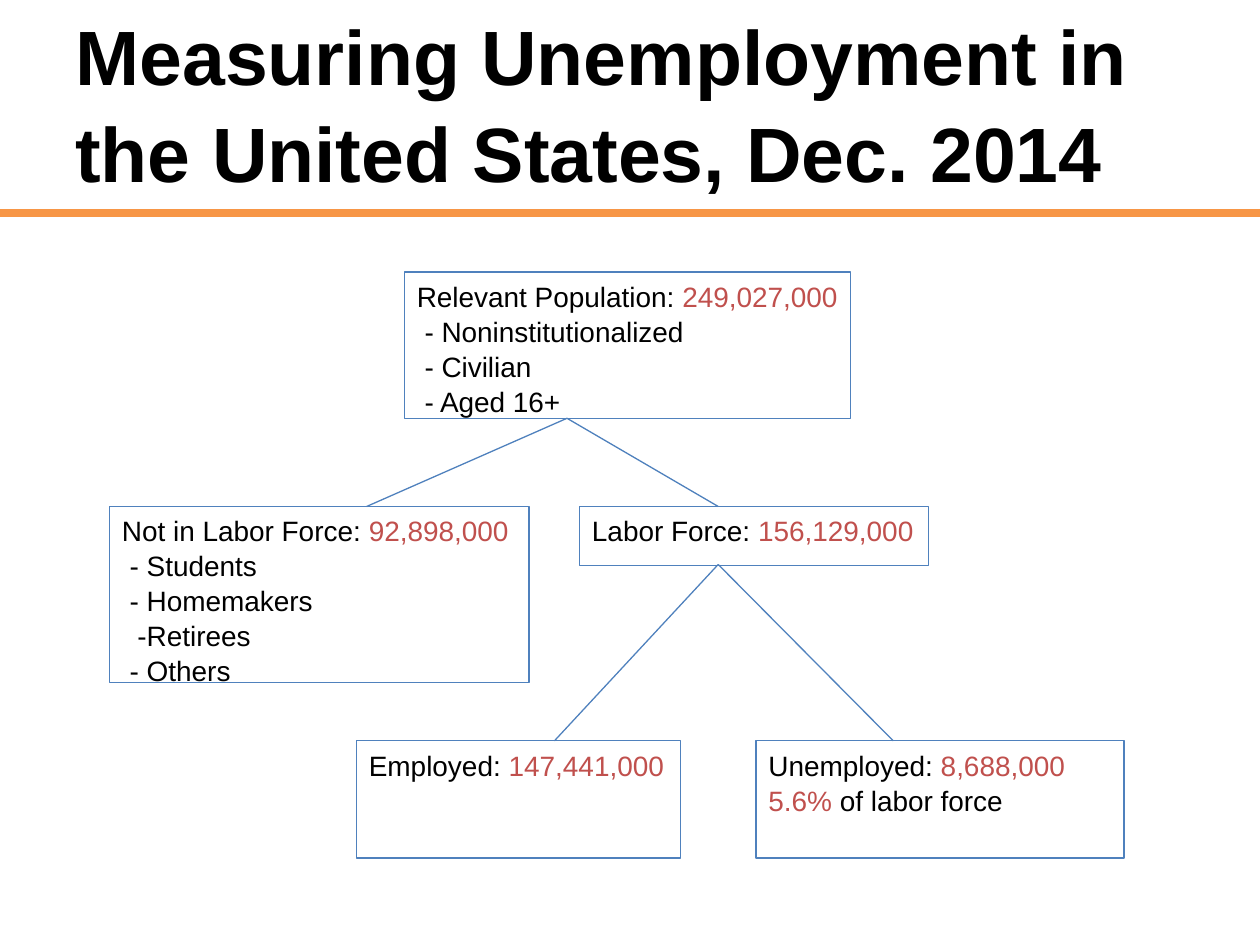
from pptx import Presentation
from pptx.dml.color import RGBColor
from pptx.enum.shapes import MSO_CONNECTOR, MSO_SHAPE
from pptx.enum.text import MSO_ANCHOR, PP_ALIGN
from pptx.oxml import parse_xml
from pptx.oxml.ns import nsdecls
from pptx.util import Pt

PX = 9144
BLACK, WHITE, RED, BLUE, ORANGE = "000000", "FFFFFF", "C0504D", "4F81BD", "F79646"

BOXES = [
    ((321, 216, 354, 116), [
        [("Relevant Population: ", BLACK), ("249,027,000", RED)],
        [(" - Noninstitutionalized", BLACK)],
        [(" - Civilian", BLACK)],
        [(" - Aged 16+", BLACK)]]),
    ((87, 402, 333, 140), [
        [("Not in Labor Force: ", BLACK), ("92,898,000", RED)],
        [(" - Students", BLACK)],
        [(" - Homemakers", BLACK)],
        [("  -Retirees", BLACK)],
        [(" - Others", BLACK)]]),
    ((460, 402, 277, 47), [
        [("Labor Force: ", BLACK), ("156,129,000", RED)]]),
    ((283, 588, 257, 93), [
        [("Employed: ", BLACK), ("147,441,000", RED)]]),
    ((600, 588, 292, 93), [
        [("Unemployed: ", BLACK), ("8,688,000", RED)],
        [("5.6% ", RED), ("of labor force", BLACK)]]),
]
BRANCHES = [
    ((450, 332), [(291, 402), (570, 402)]),
    ((570, 448), [(440, 588), (709, 588)]),
]


def px(*values):
    """Turn px lengths into EMU."""
    return [v * PX for v in values]


def rgb(value):
    """Return the colour for a hex string."""
    return RGBColor.from_string(value)


def write(tf, paragraphs, size, spacing, bold=False):
    """Fill a text frame with paragraphs of (text, colour) runs."""
    tf.word_wrap = True
    for i, runs in enumerate(paragraphs):
        p = tf.add_paragraph() if i else tf.paragraphs[0]
        p.alignment = PP_ALIGN.LEFT
        p.line_spacing = spacing
        for text, color in runs:
            r = p.add_run()
            r.text = text
            r.font.name = "Arial"
            r.font.size = Pt(size)
            r.font.bold = bold
            r.font.color.rgb = rgb(color)


def add_line(s, start, end, color, width):
    """Draw a straight line without a shadow."""
    line = s.shapes.add_connector(MSO_CONNECTOR.STRAIGHT, *px(*start, *end))
    line.line.color.rgb = rgb(color)
    line.line.width = Pt(width)
    line._element.spPr.append(parse_xml(f"<a:effectLst {nsdecls('a')}/>"))


def add_header(s, x, y, w, h):
    """Place the title and the rule beneath it."""
    add_line(s, (0, y + h + 2), (1000, y + h + 2), ORANGE, 4.5)
    tf = s.shapes.add_textbox(*px(x, y, w, h)).text_frame
    tf.vertical_anchor = MSO_ANCHOR.MIDDLE
    tf.margin_bottom = 11 * PX
    title = "Measuring Unemployment in the United States, Dec. 2014"
    write(tf, [[(title, BLACK)]], 44, 1.05, True)


def add_box(s, box, paragraphs):
    """Place one outlined box of the tree."""
    sp = s.shapes.add_shape(MSO_SHAPE.RECTANGLE, *px(*box))
    sp.shadow.inherit = False
    sp.fill.solid()
    sp.fill.fore_color.rgb = rgb(WHITE)
    sp.line.color.rgb = rgb(BLUE)
    sp.line.width = Pt(0.75)
    tf = sp.text_frame
    tf.vertical_anchor = MSO_ANCHOR.TOP
    tf.margin_right = 0
    write(tf, paragraphs, 16, 1.04)


def add_tree(s, x, y):
    """Place the boxes and branches from the given corner."""
    for (left, top, w, h), paragraphs in BOXES:
        add_box(s, (x + left, y + top, w, h), paragraphs)
    for (px0, py0), children in BRANCHES:
        for cx, cy in children:
            add_line(s, (x + cx, y + cy), (x + px0, y + py0), BLUE, 0.75)


def main():
    """Build and save the slide."""
    prs = Presentation()
    prs.slide_width, prs.slide_height = px(1000, 750)
    s = prs.slides.add_slide(prs.slide_layouts[6])
    add_header(s, 50, 0, 900, 167)
    add_tree(s, 0, 0)
    prs.save("out.pptx")


if __name__ == "__main__":
    main()
